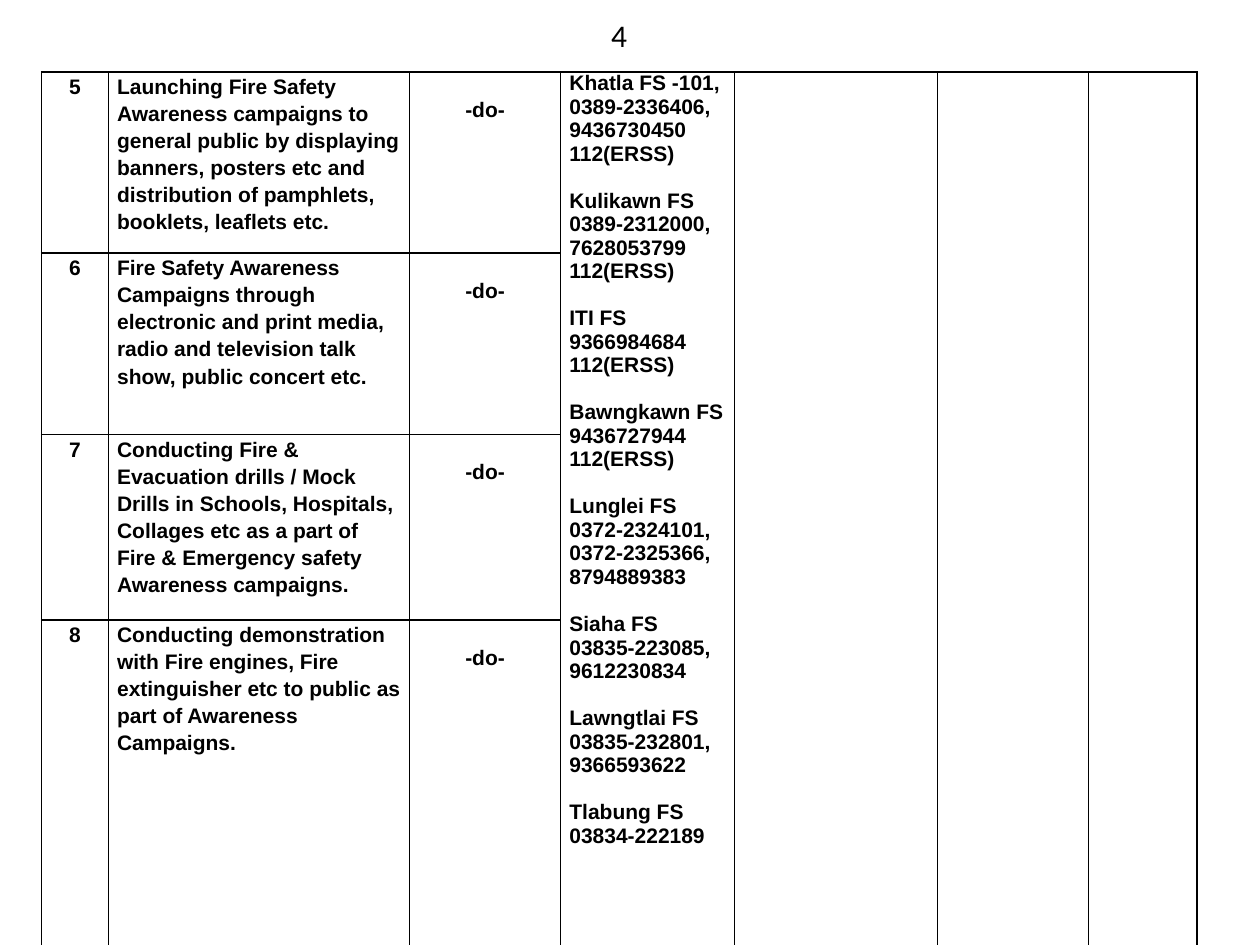
from dataclasses import dataclass

from lxml.etree import SubElement
from pptx import Presentation
from pptx.dml.color import RGBColor
from pptx.enum.text import MSO_ANCHOR, MSO_AUTO_SIZE, PP_ALIGN
from pptx.oxml.ns import qn
from pptx.util import Inches, Pt


@dataclass(frozen=True)
class Theme:
    ink: str = "000000"
    table_font: str = "Arial"
    number_font: str = "Calibri"
    table_size: float = 12
    number_size: float = 18
    group_gap: float = 13.4
    border: float = 1


theme = Theme()


def write_text(frame, groups, *, font=theme.table_font, size=theme.table_size,
               bold=True, align=PP_ALIGN.LEFT, spacing=None):
    """Write groups of lines, one paragraph a line, with a gap between groups."""
    lines = [(text, index > 0 and position == 0)
             for index, group in enumerate(groups)
             for position, text in enumerate(group)]
    for number, (text, starts_group) in enumerate(lines):
        para = frame.add_paragraph() if number else frame.paragraphs[0]
        para.alignment = align
        if spacing:
            para.line_spacing = spacing
        if starts_group:
            para.space_before = Pt(theme.group_gap)
        span = para.add_run()
        span.text = text
        span.font.name = font
        span.font.size = Pt(size)
        span.font.bold = bold
        span.font.color.rgb = RGBColor.from_string(theme.ink)


def format_cell(cell):
    """Give a cell its insets, four black borders and no fill."""
    cell.margin_left = cell.margin_right = Inches(0.07)
    cell.margin_top = cell.margin_bottom = 0
    properties = cell._tc.get_or_add_tcPr()
    for side in ("lnL", "lnR", "lnT", "lnB"):
        line = SubElement(properties, qn(f"a:{side}"), w=str(Pt(theme.border)))
        paint = SubElement(line, qn("a:solidFill"))
        SubElement(paint, qn("a:srgbClr"), val=theme.ink)
    cell.fill.background()


activities = [
    ("5", "Launching Fire Safety Awareness campaigns to general public by "
          "displaying banners, posters etc and distribution of pamphlets, "
          "booklets, leaflets etc."),
    ("6", "Fire Safety Awareness Campaigns through electronic and print media, "
          "radio and television talk show, public concert etc."),
    ("7", "Conducting Fire & Evacuation drills / Mock Drills in Schools, "
          "Hospitals, Collages etc as a part of Fire & Emergency safety "
          "Awareness campaigns."),
    ("8", "Conducting demonstration with Fire engines, Fire extinguisher etc "
          "to public as part of Awareness Campaigns."),
]
stations = [
    ("Khatla FS -101,", "0389-2336406,", "9436730450", "112(ERSS)"),
    ("Kulikawn FS", "0389-2312000,", "7628053799", "112(ERSS)"),
    ("ITI FS", "9366984684", "112(ERSS)"),
    ("Bawngkawn FS", "9436727944", "112(ERSS)"),
    ("Lunglei FS", "0372-2324101,", "0372-2325366,", "8794889383"),
    ("Siaha FS", "03835-223085,", "9612230834"),
    ("Lawngtlai FS", "03835-232801,", "9366593622"),
    ("Tlabung FS", "03834-222189"),
]
columns = [0.53, 2.39, 1.2, 1.38, 1.61, 1.2, 0.86]
rows = [1.44, 1.44, 1.47, 2.58]  # the last row runs to the foot of the page

deck = Presentation()
deck.slide_width, deck.slide_height = Inches(10), Inches(7.5)
page = deck.slides.add_slide(deck.slide_layouts[5])

# Page number in the title placeholder
title = page.shapes.title
title.left, title.top = Inches(4.75), Inches(0.08)
title.width, title.height = Inches(0.33), Inches(0.4)
box = title.text_frame
box.word_wrap = False
box.auto_size = MSO_AUTO_SIZE.SHAPE_TO_FIT_TEXT
box.vertical_anchor = MSO_ANCHOR.TOP
write_text(box, [("4",)], font=theme.number_font, size=theme.number_size,
           bold=False)

# Table grid
table = page.shapes.add_table(
    len(rows), len(columns), Inches(0.33), Inches(0.57),
    Inches(sum(columns)), Inches(sum(rows))).table
table.first_row = table.horz_banding = False
for column, width in zip(table.columns, columns):
    column.width = Inches(width)
for row, height in zip(table.rows, rows):
    row.height = Inches(height)
for cell in table.iter_cells():
    format_cell(cell)

# Station column and the three blank columns span every row
last_row = len(rows) - 1
for column in range(3, len(columns)):
    table.cell(0, column).merge(table.cell(last_row, column))
write_text(table.cell(0, 3).text_frame, stations)

# Numbered activities, with the ditto mark one line lower
for row, (number, activity) in enumerate(activities):
    table.cell(row, 2).margin_top = Inches(0.18)
    for column, text in enumerate((number, activity, "-do-")):
        write_text(table.cell(row, column).text_frame, [(text,)], spacing=1.15,
                   align=PP_ALIGN.LEFT if column == 1 else PP_ALIGN.CENTER)

deck.save("out.pptx")
